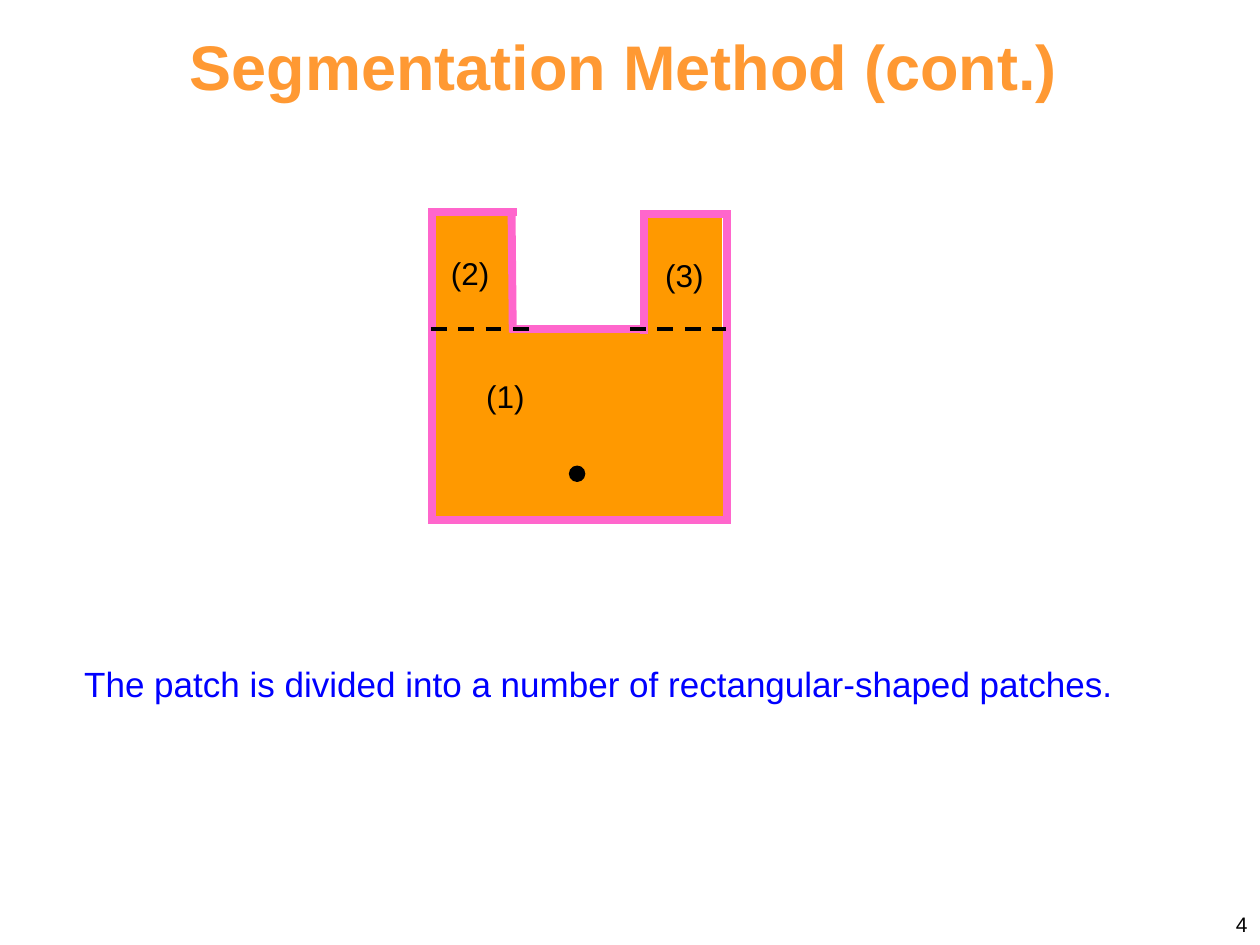
"""Build the slide that splits a U-shaped patch into three rectangles."""
from pptx import Presentation
from pptx.dml.color import RGBColor
from pptx.enum.dml import MSO_LINE
from pptx.enum.shapes import MSO_CONNECTOR, MSO_SHAPE
from pptx.enum.text import MSO_ANCHOR, MSO_AUTO_SIZE, PP_ALIGN
from pptx.oxml.ns import qn
from pptx.util import Inches, Pt
from lxml.etree import SubElement

ORANGE = RGBColor(0xFF, 0x99, 0x00)
TITLE_ORANGE = RGBColor(0xFF, 0x99, 0x33)
PINK = RGBColor(0xFF, 0x66, 0xCC)
BLUE = RGBColor(0x00, 0x00, 0xFF)
BLACK = RGBColor(0x00, 0x00, 0x00)

TITLE = "Segmentation Method (cont.)"
CAPTION = "The patch is divided into a number of rectangular-shaped patches."
PAGE_NUMBER = "4"
PATCHES = [(3.46, 2.62, 2.29, 1.49), (3.46, 1.69, 0.61, 0.94), (5.12, 1.69, 0.61, 0.94)]
DOT = (4.52, 3.7, 0.12, 0.12)
OUTLINE = [
    (3.42, 4.13, 5.8, 4.13),
    (3.43, 4.16, 3.43, 1.66),
    (5.77, 4.15, 5.77, 1.69),
    (4.05, 2.61, 5.14, 2.61),
    (3.4, 1.68, 4.1, 1.68),
    (5.08, 1.7, 5.8, 1.7),
    (4.07, 2.64, 4.06, 1.66),
    (5.11, 2.65, 5.11, 1.69),
]
CUTS = [(3.42, 2.61, 4.22, 2.61), (5, 2.61, 5.76, 2.61)]
LABELS = [("(2)", 3.48, 1.97), ("(3)", 5.18, 1.98), ("(1)", 3.76, 2.94)]


def write(box, text, size, color, bold=False, align=PP_ALIGN.LEFT,
          anchor=MSO_ANCHOR.TOP, wrap=True):
    frame = box.text_frame
    frame.word_wrap = wrap
    frame.auto_size = MSO_AUTO_SIZE.NONE
    frame.vertical_anchor = anchor
    para = frame.paragraphs[0]
    para.alignment = align
    span = para.add_run()
    span.text = text
    span.font.name = "Arial"
    span.font.size = Pt(size)
    span.font.bold = bold
    span.font.color.rgb = color


def add_text(page, text, place, **style):
    write(page.shapes.add_textbox(*map(Inches, place)), text, **style)


def add_filled(page, kind, place, color):
    shape = page.shapes.add_shape(kind, *map(Inches, place))
    shape.shadow.inherit = False
    shape.fill.solid()
    shape.fill.fore_color.rgb = color
    shape.line.fill.background()
    return shape


def add_line(page, ends, color, width, dash=None):
    line = page.shapes.add_connector(MSO_CONNECTOR.STRAIGHT, *map(Inches, ends))
    line.line.color.rgb = color
    line.line.width = Pt(width)
    if dash:
        line.line.dash_style = dash
    SubElement(line._element.spPr, qn("a:effectLst"))


def main():
    deck = Presentation()
    deck.slide_width, deck.slide_height = Inches(10), Inches(7.5)
    page = deck.slides.add_slide(deck.slide_layouts[5])

    title = page.shapes.title
    title.left, title.top, title.width, title.height = map(Inches, (1.31, 0.26, 7.28, 0.52))
    write(title, TITLE, size=36, color=TITLE_ORANGE, bold=True,
          align=PP_ALIGN.CENTER, anchor=MSO_ANCHOR.MIDDLE)
    add_text(page, CAPTION, (0.57, 5.21, 8.4, 0.43), size=20, color=BLUE)

    for place in PATCHES:
        add_filled(page, MSO_SHAPE.RECTANGLE, place, ORANGE)
    dot = add_filled(page, MSO_SHAPE.OVAL, DOT, BLACK)
    dot.line.color.rgb = BLACK
    dot.line.width = Pt(0.75)

    for ends in OUTLINE:
        add_line(page, ends, PINK, 4.5)
    for ends in CUTS:
        add_line(page, ends, BLACK, 2.25, MSO_LINE.DASH)
    for text, left, top in LABELS:
        add_text(page, text, (left, top, 0.51, 0.4), size=18, color=BLACK, wrap=False)

    add_text(page, PAGE_NUMBER, (7.67, 6.98, 2.33, 0.5), size=12, color=BLACK,
             align=PP_ALIGN.RIGHT, anchor=MSO_ANCHOR.BOTTOM)
    deck.save("out.pptx")


if __name__ == "__main__":
    main()
